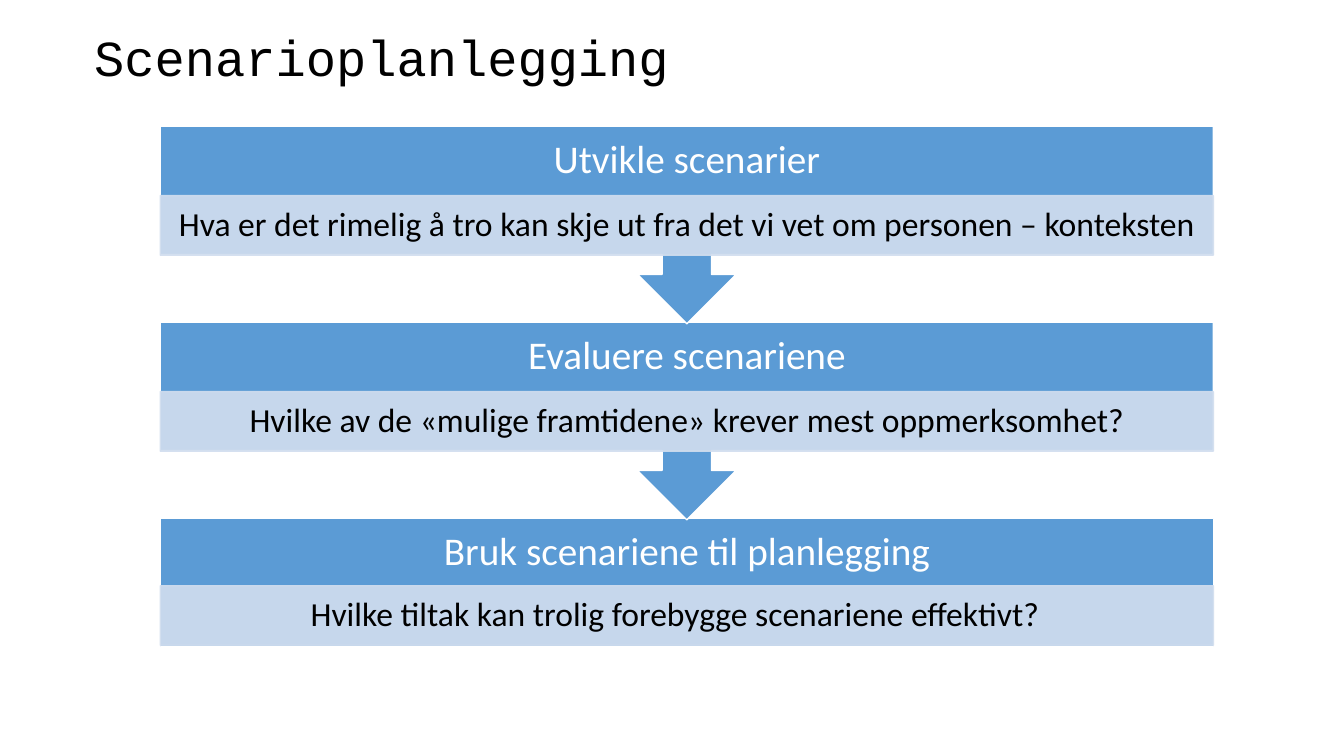
import pptx
import pptx.util
import pptx.dml.color
import pptx.enum.shapes
import pptx.enum.text
from pptx.util import Cm, Pt

MSO_SHAPE = pptx.enum.shapes.MSO_SHAPE


def color(hex_string):
    return pptx.dml.color.RGBColor.from_string(hex_string)


def add_box(kind, top, height, fill, line, text, size, font_color):
    """Add a full-width step shape with one centred line of text."""
    shape = slide.shapes.add_shape(kind, Cm(4.04), Cm(top), Cm(26.54), Cm(height))
    shape.shadow.inherit = False
    shape.fill.solid()
    shape.fill.fore_color.rgb = color(fill)
    shape.line.color.rgb = color(line)
    shape.line.width = Pt(1)
    frame = shape.text_frame
    frame.word_wrap = True
    frame.vertical_anchor = pptx.enum.text.MSO_ANCHOR.MIDDLE
    frame.margin_left = frame.margin_right = Cm(0.4)
    frame.margin_top = frame.margin_bottom = 0
    paragraph = frame.paragraphs[0]
    paragraph.text = text
    paragraph.alignment = pptx.enum.text.PP_ALIGN.CENTER
    paragraph.line_spacing = 0.9
    paragraph.font.name = "Calibri"
    paragraph.font.size = Pt(size)
    paragraph.font.color.rgb = color(font_color)
    return shape


presentation = pptx.Presentation()
presentation.slide_width = Cm(33.87)
presentation.slide_height = Cm(19.05)
slide = presentation.slides.add_slide(presentation.slide_layouts[5])

# Title
title = slide.shapes.title
title.left, title.top, title.width, title.height = Cm(2.12), Cm(0.25), Cm(29.2), Cm(2.54)
title.text_frame.vertical_anchor = pptx.enum.text.MSO_ANCHOR.MIDDLE
paragraph = title.text_frame.paragraphs[0]
paragraph.text = "Scenarioplanlegging"
paragraph.alignment = pptx.enum.text.PP_ALIGN.LEFT
paragraph.line_spacing = 0.9
paragraph.font.name = "Courier New"
paragraph.font.size = Pt(36)
paragraph.font.color.rgb = color("000000")

# Steps: heading, detail, shape, height, offset of the detail, its right margin
callout, box = MSO_SHAPE.DOWN_ARROW_CALLOUT, MSO_SHAPE.RECTANGLE
steps = [
    ("Utvikle scenarier",
     "Hva er det rimelig å tro kan skje ut fra det vi vet om personen – konteksten",
     callout, 4.98, 1.75, 0.4),
    ("Evaluere scenariene",
     "Hvilke av de «mulige framtidene» krever mest oppmerksomhet?",
     callout, 4.98, 1.75, 0.4),
    ("Bruk scenariene til planlegging",
     "Hvilke tiltak kan trolig forebygge scenariene effektivt?",
     box, 3.24, 1.7, 1.0),
]

# Draw from the last step up, so that each arrow lies over the next step
for index, step in reversed(list(enumerate(steps))):
    heading, detail, kind, height, detail_offset, right_margin = step
    top = 3.18 + index * 4.94

    heading_shape = add_box(kind, top, height, "5B9BD5", "FFFFFF", heading, 28, "FFFFFF")
    heading_shape.text_frame.margin_bottom = Cm(1.5)

    detail_shape = add_box(box, top + detail_offset, 1.5, "D2DEEF", "D2DEEF", detail, 24, "000000")
    detail_shape.text_frame.margin_right = Cm(right_margin)

    # Fill and line of the detail are 90 % opaque
    for color_element in detail_shape._element.spPr.iter(pptx.oxml.ns.qn("a:srgbClr")):
        alpha = pptx.oxml.parse_xml(
            '<a:alpha xmlns:a="http://schemas.openxmlformats.org/drawingml/2006/main" val="90000"/>')
        color_element.append(alpha)

presentation.save("out.pptx")
